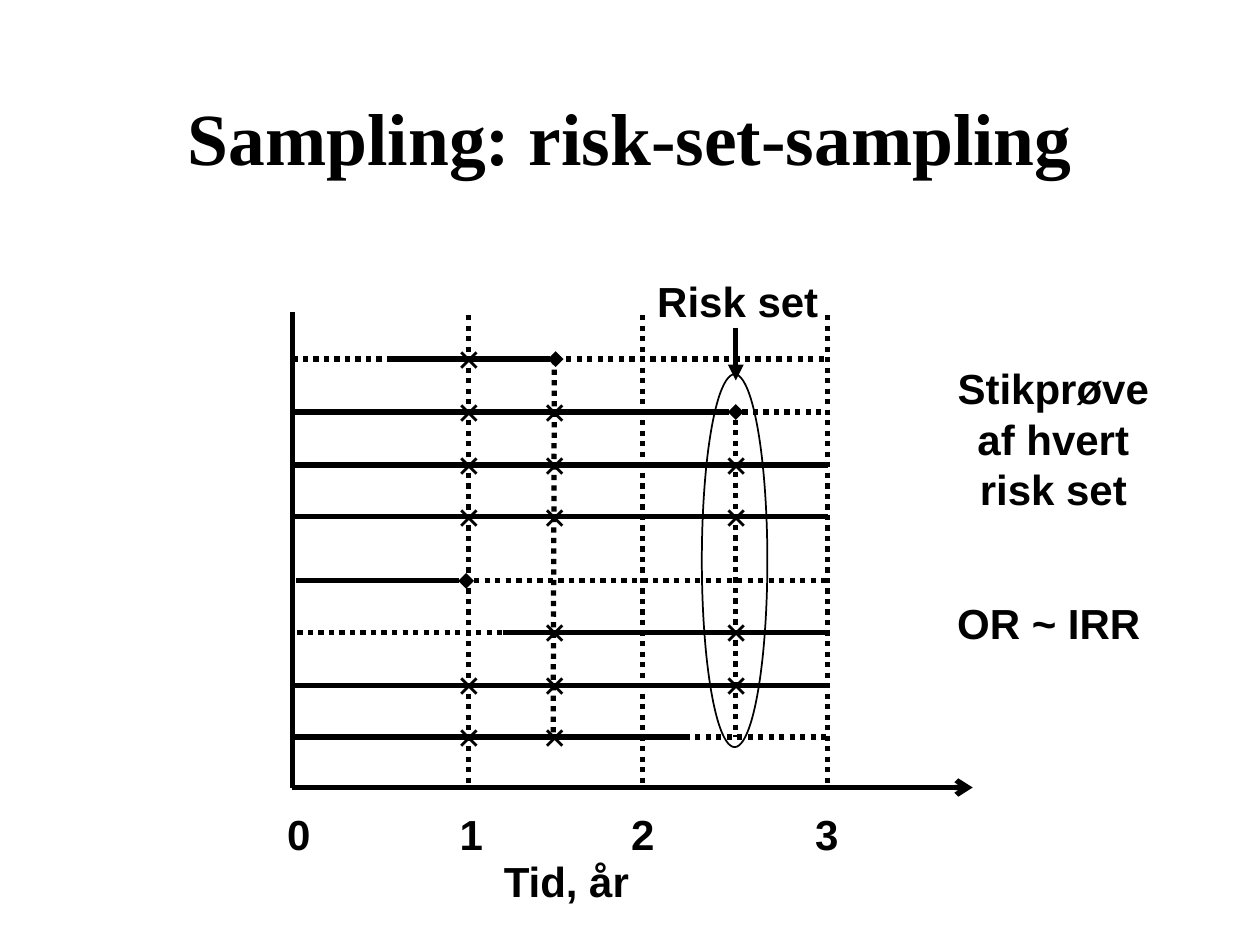
"""Build the slide on risk-set sampling with its follow-up time diagram."""
from lxml.etree import SubElement
from pptx import Presentation
from pptx.dml.color import RGBColor
from pptx.enum.dml import MSO_LINE
from pptx.enum.shapes import MSO_CONNECTOR, MSO_SHAPE
from pptx.enum.text import MSO_ANCHOR, MSO_AUTO_SIZE, PP_ALIGN
from pptx.oxml.ns import qn
from pptx.util import Emu, Pt

BLACK = RGBColor(0, 0, 0)
PX = 9144


def add_line(x1, y1, x2, y2, dotted=False, tail=None):
    ends = [Emu(v * PX) for v in (x1, y1, x2, y2)]
    sp = s.shapes.add_connector(MSO_CONNECTOR.STRAIGHT, *ends)
    sp.line.color.rgb = BLACK
    sp.line.width = Pt(3)
    if dotted:
        sp.line.dash_style = MSO_LINE.ROUND_DOT
    if tail:
        SubElement(sp.line._get_or_add_ln(), qn("a:tailEnd"), type=tail)
    SubElement(sp._element.spPr, qn("a:effectLst"))


def add_text(text, x, y, w, h=50, align=PP_ALIGN.LEFT, font="Arial", wrap=True):
    sp = s.shapes.add_textbox(*[Emu(v * PX) for v in (x, y, w, h)])
    tf = sp.text_frame
    tf.word_wrap = wrap
    tf.auto_size = MSO_AUTO_SIZE.SHAPE_TO_FIT_TEXT
    p = tf.paragraphs[0]
    p.text = text
    p.alignment = align
    r = p.runs[0]
    r.font.name = font
    r.font.size = Pt(24)
    r.font.bold = True
    r.font.color.rgb = BLACK


prs = Presentation()
prs.slide_width = Emu(1000 * PX)
prs.slide_height = Emu(750 * PX)
s = prs.slides.add_slide(prs.slide_layouts[5])

title = s.shapes.title
title.left, title.top, title.width, title.height = [Emu(v * PX) for v in (69, 40, 862, 145)]
tf = title.text_frame
tf.text = "Sampling: risk-set-sampling"
tf.vertical_anchor = MSO_ANCHOR.MIDDLE
p = tf.paragraphs[0]
p.alignment = PP_ALIGN.CENTER
p.line_spacing = 0.9
r = p.runs[0]
r.font.name = "Times New Roman"
r.font.size = Pt(42)
r.font.bold = True
r.font.color.rgb = BLACK

ORIGIN, YEAR1, CASE1, YEAR2, CASE2, YEAR3 = 232, 372, 440, 510, 584, 657
AXIS, TOP = 625, 250

sp = s.shapes.add_shape(MSO_SHAPE.OVAL, *[Emu(v * PX) for v in (557, 297, 52, 296)])
sp.shadow.inherit = False
sp.fill.background()
sp.line.color.rgb = BLACK
sp.line.width = Pt(1)

add_line(ORIGIN, 248, ORIGIN, AXIS)
add_line(ORIGIN, AXIS, 772, AXIS, tail="arrow")
for x in (YEAR1, YEAR2, YEAR3):
    add_line(x, TOP, x, 622, dotted=True)
add_line(CASE1, 285, CASE1 - 1, 587, dotted=True)
add_line(CASE2, 333, CASE2, 585, dotted=True)
add_line(CASE2, 260, CASE2, 302, tail="triangle")

subjects = [
    (285, 307, 441, "diamond", [(232, 446), (441, 655)], [YEAR1]),
    (327, 234, 584, "diamond", [(439, 653)], [YEAR1, CASE1]),
    (369, 234, YEAR3, None, [], [YEAR1, CASE1, CASE2]),
    (410, 232, YEAR3, None, [], [YEAR1, CASE1, CASE2]),
    (461, 235, 370, "diamond", [(368, 656)], []),
    (502, 399, 659, None, [(236, 525)], [CASE1, CASE2]),
    (544, 234, 659, None, [], [YEAR1, CASE1, CASE2]),
    (585, 232, 544, None, [(368, 656)], [YEAR1, CASE1]),
]
for y, start, end, tail, unobserved, controls in subjects:
    add_line(start, y, end, y, tail=tail)
    for x1, x2 in unobserved:
        add_line(x1, y, x2, y, dotted=True)
    for x in controls:
        add_text("×", x - 19, y - 26, 35, font="Times New Roman", wrap=False)

for year, x in enumerate((218, 355, 491, 637)):
    add_text(str(year), x, 637, 39)
add_text("Tid, år", 390, 674, 137)
add_text("Risk set", 493, 214, 185, align=PP_ALIGN.CENTER)
add_text("Stikprøve af hvert risk set", 743, 283, 186, 130, PP_ALIGN.CENTER)
add_text("OR ~ IRR ", 748, 469, 178, align=PP_ALIGN.CENTER)

prs.save("out.pptx")
